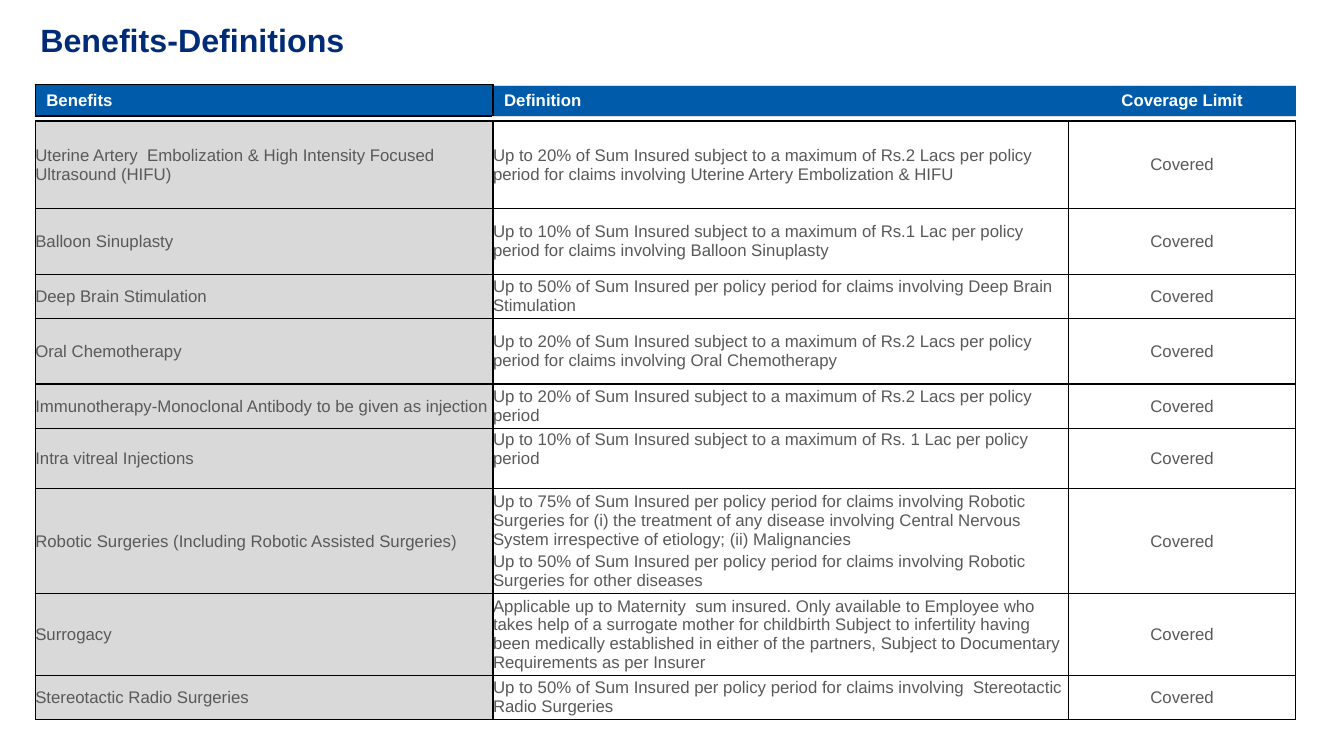
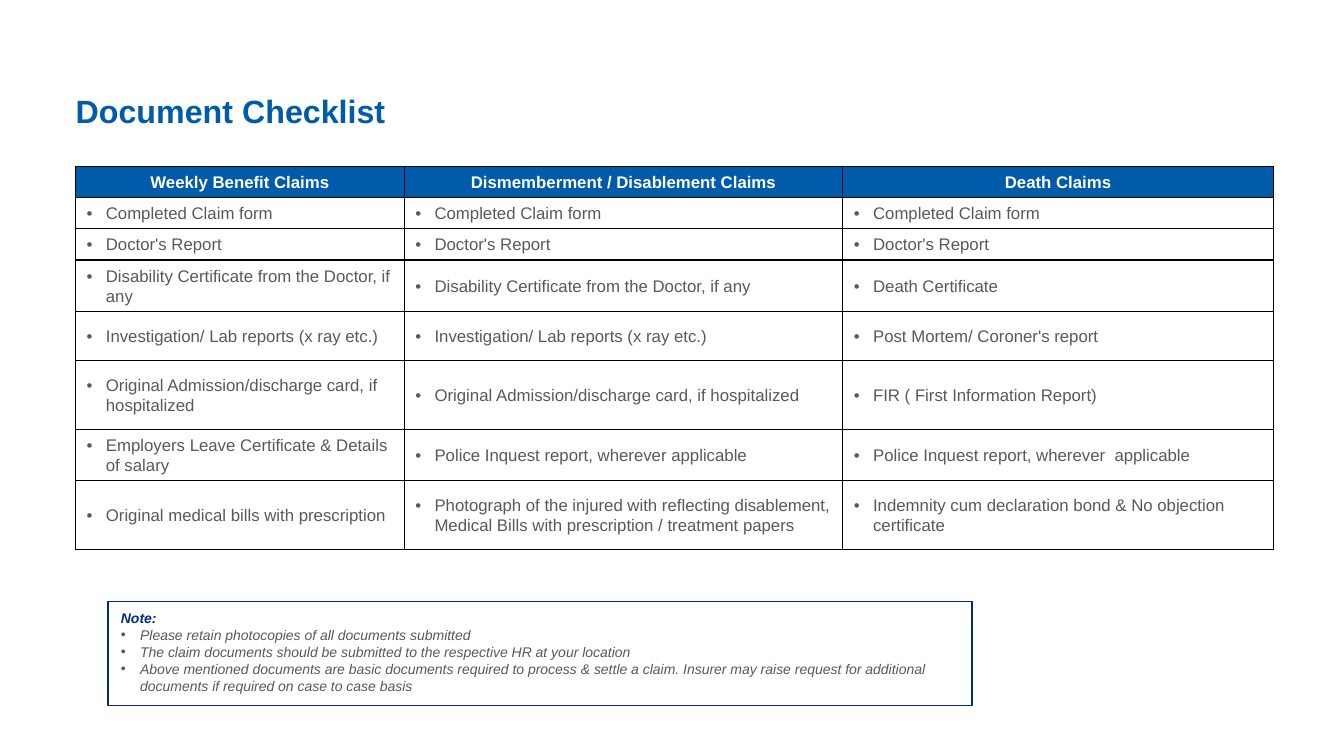
from dataclasses import dataclass

from lxml.etree import SubElement
from pptx import Presentation
from pptx.dml.color import RGBColor
from pptx.enum.shapes import MSO_SHAPE
from pptx.enum.text import MSO_ANCHOR, PP_ALIGN
from pptx.oxml.ns import qn
from pptx.util import Emu, Inches, Pt


# Shared look
@dataclass(frozen=True)
class Theme:
    font: str = "Arial"
    navy: str = "002C77"
    blue: str = "005BAA"
    text: str = "595959"
    grey: str = "D9D9D9"
    white: str = "FFFFFF"
    black: str = "000000"
    title_size: float = 23
    title_spacing: float = 34
    table_size: float = 12
    table_spacing: float = 14.4
    note_size: float = 10
    bullet_indent: float = 0.19


THEME = Theme()
HEADER_FONT = {"size": Pt(THEME.table_size), "bold": True}
BODY_FONT = {"size": Pt(THEME.table_size)}
CENTERED = {"alignment": PP_ALIGN.CENTER}
SPACED = {"line_spacing": Pt(THEME.table_spacing)}
NO_MARGINS = (0, 0, 0, 0)
CELL_MARGINS = (0.11, 0.05, 0.11, 0.05)
BLACK_LINE = (THEME.black, 1)
PALE_LINE = (THEME.grey, 0.25)
BOXED = dict.fromkeys("LRTB", BLACK_LINE)

# Slide content
BENEFITS = [
    (0.87, "Uterine Artery  Embolization & High Intensity Focused Ultrasound (HIFU)",
     ["Up to 20% of Sum Insured subject to a maximum of Rs.2 Lacs per policy "
      "period for claims involving Uterine Artery Embolization & HIFU"]),
    (0.65, "Balloon Sinuplasty",
     ["Up to 10% of Sum Insured subject to a maximum of Rs.1 Lac per policy "
      "period for claims involving Balloon Sinuplasty"]),
    (0.44, "Deep Brain Stimulation",
     ["Up to 50% of Sum Insured per policy period for claims involving Deep "
      "Brain Stimulation"]),
    (0.65, "Oral Chemotherapy",
     ["Up to 20% of Sum Insured subject to a maximum of Rs.2 Lacs per policy "
      "period for claims involving Oral Chemotherapy"]),
    (0.44, "Immunotherapy-Monoclonal Antibody to be given as injection",
     ["Up to 20% of Sum Insured subject to a maximum of Rs.2 Lacs per policy period"]),
    (0.6, "Intra vitreal Injections",
     ["Up to 10% of Sum Insured subject to a maximum of Rs. 1 Lac per policy period"]),
    (1.04, "Robotic Surgeries (Including Robotic Assisted Surgeries)",
     ["Up to 75% of Sum Insured per policy period for claims involving Robotic "
      "Surgeries for (i) the treatment of any disease involving Central Nervous "
      "System irrespective of etiology; (ii) Malignancies",
      "Up to 50% of Sum Insured per policy period for claims involving Robotic "
      "Surgeries for other diseases"]),
    (0.81, "Surrogacy",
     ["Applicable up to Maternity  sum insured. Only available to Employee who "
      "takes help of a surrogate mother for childbirth Subject to infertility "
      "having been medically established in either of the partners, Subject to "
      "Documentary Requirements as per Insurer"]),
    (0.44, "Stereotactic Radio Surgeries",
     ["Up to 50% of Sum Insured per policy period for claims involving  "
      "Stereotactic Radio Surgeries"]),
]
RAISED_BENEFIT = "Intra vitreal Injections"

CLAIM_TYPES = ["Weekly Benefit Claims", "Dismemberment / Disablement Claims", "Death Claims"]
DOCUMENTS = [
    (0.31, ["Completed Claim form"] * 3),
    (0.31, ["Doctor's Report"] * 3),
    (0.51, ["Disability Certificate from the Doctor, if any"] * 2 + ["Death Certificate"]),
    (0.49, ["Investigation/ Lab reports (x ray etc.)"] * 2 + ["Post Mortem/ Coroner's report"]),
    (0.68, ["Original Admission/discharge card, if hospitalized"] * 2
     + ["FIR ( First Information Report)"]),
    (0.51, ["Employers Leave Certificate & Details of salary",
            "Police Inquest report, wherever applicable",
            "Police Inquest report, wherever  applicable"]),
    (0.68, ["Original medical bills with prescription",
            "Photograph of the injured with reflecting disablement, Medical Bills "
            "with prescription / treatment papers",
            "Indemnity cum declaration bond & No objection certificate"]),
]
NOTES = [
    "Please retain photocopies of all documents submitted",
    "The claim documents should be submitted to the respective HR at your location",
    "Above mentioned documents are basic documents required to process & settle a "
    "claim. Insurer may raise request for additional documents if required on case "
    "to case basis",
]


# Text
def apply(target, values):
    for name, value in values.items():
        setattr(target, name, value)


def set_margins(target, margins):
    sides = ("margin_left", "margin_top", "margin_right", "margin_bottom")
    apply(target, dict(zip(sides, map(Inches, margins))))


def add_bullet(para):
    properties = para._p.get_or_add_pPr()
    indent = Inches(THEME.bullet_indent)
    properties.set("marL", str(indent))
    properties.set("indent", str(-indent))
    SubElement(properties, qn("a:buFont"), typeface=THEME.font)
    SubElement(properties, qn("a:buChar"), char="•")


def write_para(frame, text, font, color, layout=None, bullet=False):
    """Fill the empty first paragraph, or add another one."""
    para = frame.paragraphs[0]
    if para.runs:
        para = frame.add_paragraph()
    if bullet:
        add_bullet(para)
    apply(para, layout or {})
    span = para.add_run()
    span.text = text
    apply(span.font, {"name": THEME.font, **font})
    span.font.color.rgb = RGBColor.from_string(color)


def add_text_box(page, left, top, width, height):
    box = page.shapes.add_textbox(*map(Inches, (left, top, width, height)))
    box.text_frame.word_wrap = True
    set_margins(box.text_frame, NO_MARGINS)
    return box.text_frame


def add_title(page, text, color, left, top, width):
    frame = add_text_box(page, left, top, width, 0.43)
    write_para(frame, text, {"size": Pt(THEME.title_size), "bold": True}, color,
               {"line_spacing": Pt(THEME.title_spacing)})


# Tables
def add_grid(page, left, top, columns, rows):
    shape = page.shapes.add_table(
        len(rows), len(columns), *map(Inches, (left, top, sum(columns), sum(rows))))
    table = shape.table
    apply(table, {"first_row": False, "horz_banding": False})
    for column, width in zip(table.columns, columns):
        column.width = Inches(width)
    for row, height in zip(table.rows, rows):
        row.height = Inches(height)
    return table


def style_cell(cell, fill=None, margins=CELL_MARGINS, borders=BOXED):
    cell.vertical_anchor = MSO_ANCHOR.MIDDLE
    set_margins(cell, margins)
    properties = cell._tc.get_or_add_tcPr()
    for side in "LRTB":
        color, width = borders.get(side, (None, 0))
        line = SubElement(properties, qn(f"a:ln{side}"), w=str(Emu(Pt(width))))
        if color:
            solid = SubElement(line, qn("a:solidFill"))
            SubElement(solid, qn("a:srgbClr"), val=color)
        else:
            SubElement(line, qn("a:noFill"))
    if fill:
        cell.fill.solid()
        cell.fill.fore_color.rgb = RGBColor.from_string(fill)
    else:
        cell.fill.background()
    return cell.text_frame


# Slides
def build_benefits(page):
    add_title(page, "Benefits-Definitions", THEME.navy, 0.4, 0.11, 7.2)
    columns = [4.54, 5.71, 2.25]

    table = add_grid(page, 0.35, 1.2, columns, [height for height, *_ in BENEFITS])
    for row, (_, benefit, definition) in enumerate(BENEFITS):
        # The raised definition leaves one empty line's height below it
        raised = (0, 0, 0, 0.18) if benefit == RAISED_BENEFIT else NO_MARGINS
        cells = [([benefit], THEME.grey, NO_MARGINS, {}),
                 (definition, THEME.white, raised, {}),
                 (["Covered"], THEME.white, NO_MARGINS, CENTERED)]
        for column, (texts, fill, margins, layout) in enumerate(cells):
            frame = style_cell(table.cell(row, column), fill, margins)
            for index, text in enumerate(texts):
                gap = {"space_before": Pt(2.4)} if index else {}
                write_para(frame, text, BODY_FONT, THEME.text, {**layout, **gap})

    header = add_grid(page, 0.35, 0.84, columns, [0.31])
    pale = {"T": PALE_LINE, "B": PALE_LINE}
    headings = [("Benefits", BOXED, {}),
                ("Definition", {"L": BLACK_LINE, **pale}, {}),
                ("Coverage Limit", pale, CENTERED)]
    for column, (text, borders, layout) in enumerate(headings):
        frame = style_cell(header.cell(0, column), THEME.blue, borders=borders)
        write_para(frame, text, HEADER_FONT, THEME.white, layout)


def add_note(page):
    panel = page.shapes.add_shape(
        MSO_SHAPE.RECTANGLE, *map(Inches, (1.07, 5.97, 8.57, 1.03)))
    panel.shadow.inherit = False
    panel.fill.solid()
    panel.fill.fore_color.rgb = RGBColor.from_string(THEME.white)
    panel.line.color.rgb = RGBColor.from_string(THEME.navy)
    panel.line.width = Pt(1)

    frame = add_text_box(page, 1.2, 6.05, 8.33, 0.84)
    font = {"size": Pt(THEME.note_size), "italic": True}
    write_para(frame, "Note:", {**font, "bold": True}, THEME.navy)
    for note in NOTES:
        write_para(frame, note, font, THEME.text, bullet=True)


def build_checklist(page):
    add_title(page, "Document Checklist", THEME.blue, 0.75, 0.82, 3.51)
    rows = [0.31] + [height for height, _ in DOCUMENTS]
    table = add_grid(page, 0.75, 1.65, [3.26, 4.35, 4.27], rows)
    for column, claim in enumerate(CLAIM_TYPES):
        frame = style_cell(table.cell(0, column), THEME.blue)
        write_para(frame, claim, HEADER_FONT, THEME.white, {**CENTERED, **SPACED})
    for row, (_, documents) in enumerate(DOCUMENTS, start=1):
        for column, document in enumerate(documents):
            frame = style_cell(table.cell(row, column))
            write_para(frame, document, BODY_FONT, THEME.text, SPACED, bullet=True)
    add_note(page)


def main():
    deck = Presentation()
    apply(deck, {"slide_width": Inches(13.33), "slide_height": Inches(7.5)})
    for build in (build_benefits, build_checklist):
        build(deck.slides.add_slide(deck.slide_layouts[6]))
    deck.save("out.pptx")


if __name__ == "__main__":
    main()
